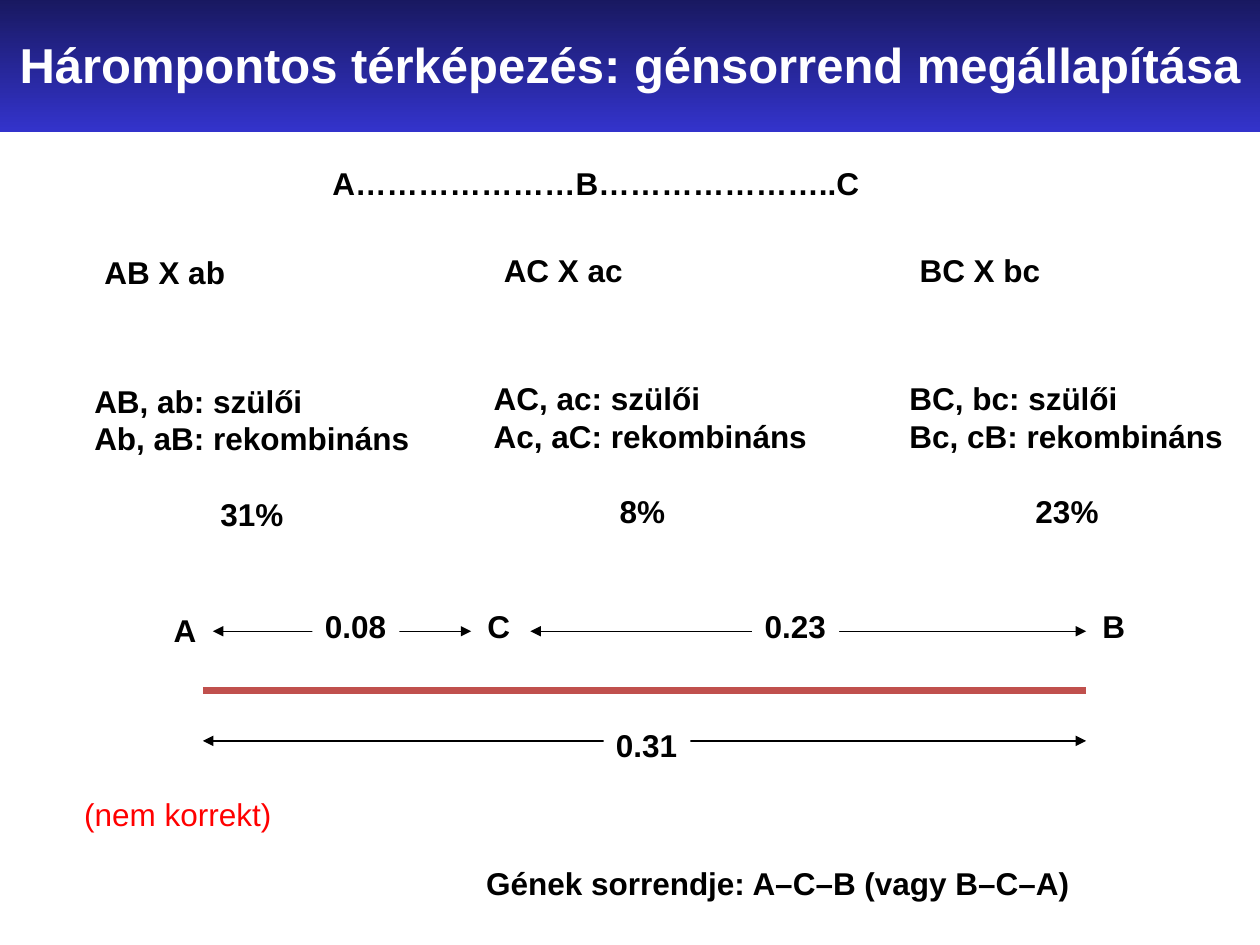
from pptx import Presentation
from pptx.dml.color import RGBColor
from pptx.enum.shapes import MSO_CONNECTOR, MSO_SHAPE
from pptx.enum.text import MSO_ANCHOR, MSO_AUTO_SIZE, PP_ALIGN
from pptx.oxml.ns import qn
from pptx.util import Pt
from lxml.etree import SubElement

PX = 9144  # EMU in one px, 100 px to the inch
COLORS = {
    "text": "000000", "paper": "FFFFFF", "wrong": "FF0000",
    "chromosome": "C0504D", "banner_top": "18185E", "banner_bottom": "3333CC",
}


def color(name):
    return RGBColor.from_string(COLORS[name])


class MapSlide:
    font = "Arial"
    size = 18
    line_height = 21.6
    text_height = 40

    def __init__(self, deck):
        self.page = deck.slides.add_slide(deck.slide_layouts[5])

    def style(self, para, ink="text", bold=True, size=None):
        for span in para.runs:
            span.font.name = self.font
            span.font.size = Pt(size or self.size)
            span.font.bold = bold
            span.font.color.rgb = color(ink)

    def title(self, text, left, top, width, height):
        box = self.page.shapes.title
        box.left, box.top, box.width, box.height = (
            n * PX for n in (left, top, width, height))
        box.fill.gradient()
        box.fill.gradient_angle = 270
        for stop, name in zip(box.fill.gradient_stops, ("banner_top", "banner_bottom")):
            stop.color.rgb = color(name)
        frame = box.text_frame
        frame.text = text
        frame.auto_size = MSO_AUTO_SIZE.NONE
        frame.vertical_anchor = MSO_ANCHOR.MIDDLE
        frame.paragraphs[0].alignment = PP_ALIGN.CENTER
        self.style(frame.paragraphs[0], "paper", size=28)

    def fill_text(self, box, text, ink="text", bold=True):
        frame = box.text_frame
        frame.text = text
        frame.word_wrap = False
        frame.vertical_anchor = MSO_ANCHOR.TOP
        for para in frame.paragraphs:
            para.alignment = PP_ALIGN.LEFT
            para.line_spacing = Pt(self.line_height)
            self.style(para, ink, bold)
        return frame

    def text(self, text, left, top, width, height=text_height, **look):
        box = self.page.shapes.add_textbox(*(n * PX for n in (left, top, width, height)))
        return self.fill_text(box, text, **look)

    def distance(self, text, left, top):
        box = self.page.shapes.add_shape(
            MSO_SHAPE.RECTANGLE, *(n * PX for n in (left, top, 69, self.text_height)))
        box.shadow.inherit = False
        box.fill.solid()
        box.fill.fore_color.rgb = color("paper")
        box.line.fill.background()
        self.fill_text(box, text)

    def line(self, start, end, y, ink="text", width=0.75, arrows=True):
        line = self.page.shapes.add_connector(
            MSO_CONNECTOR.STRAIGHT, *(n * PX for n in (start, y, end, y)))
        line.line.color.rgb = color(ink)
        line.line.width = Pt(width)
        if arrows:
            for tag in ("a:headEnd", "a:tailEnd"):
                SubElement(line.line._get_or_add_ln(), qn(tag), type="triangle")
        SubElement(line._element.spPr, qn("a:effectLst"))

    def cross(self, pair, offspring, percent, left, top):
        self.text(pair, left, top, 116)
        frame = self.text(f"{offspring}\n{percent}", left - 8, top + 102, 270, 130)
        result = frame.paragraphs[-1]
        result.space_before = Pt(self.line_height)
        result._p.get_or_add_pPr().set("marL", str(100 * PX))


def main():
    deck = Presentation()
    deck.slide_width, deck.slide_height = 1000 * PX, 750 * PX
    slide = MapSlide(deck)

    # Title and assumed gene order
    slide.title("Hárompontos térképezés: génsorrend megállapítása", 0, -3, 1000, 108)
    slide.text("A…………………B…………………..C", 254, 125, 438)

    # Crosses with their offspring and recombination rates
    slide.cross("AB X ab", "AB, ab: szülői\nAb, aB: rekombináns", "31%", 73, 196)
    slide.cross("AC X ac", "AC, ac: szülői\nAc, aC: rekombináns", "8%", 390, 194)
    slide.cross("BC X bc", "BC, bc: szülői\nBc, cB: rekombináns", "23%", 720, 194)

    # Chromosome and distance arrows
    slide.line(161, 862, 548, "chromosome", 4.5, arrows=False)
    for start, end, y in ((169, 374, 501), (421, 862, 501), (161, 862, 588)):
        slide.line(start, end, y)
    for value, left, top in (("0.08", 248, 477), ("0.23", 597, 477), ("0.31", 479, 571)):
        slide.distance(value, left, top)
    for gene, left, top in (("A", 128, 480), ("C", 377, 477), ("B", 865, 477)):
        slide.text(gene, left, top, 38)

    # Conclusion
    slide.text("(nem korrekt)", 57, 626, 170, ink="wrong", bold=False)
    slide.text("Gének sorrendje: A–C–B (vagy B–C–A)", 376, 681, 488)

    deck.save("out.pptx")


if __name__ == "__main__":
    main()
